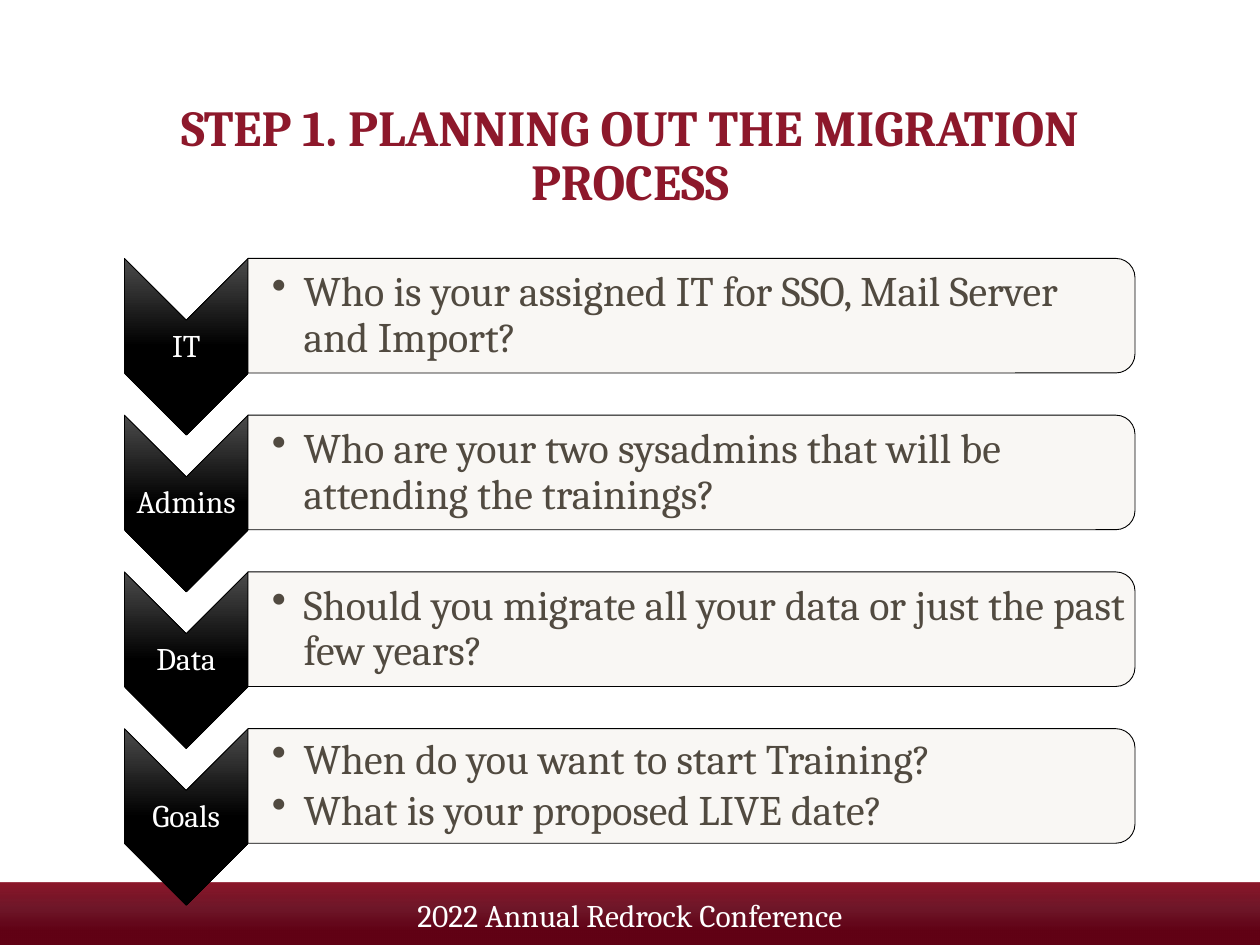
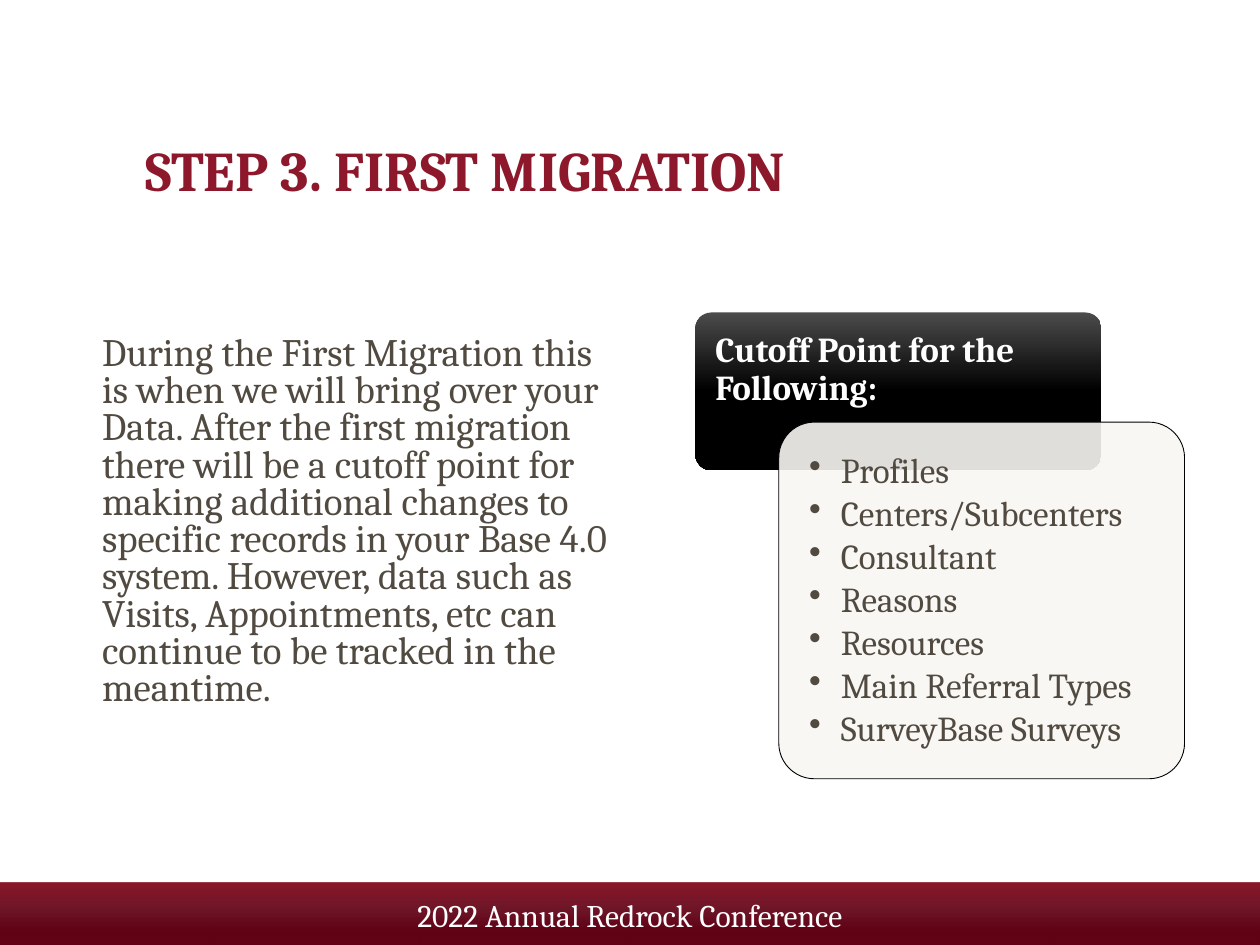
from lxml import etree
from pptx import Presentation
from pptx import util as u
from pptx.dml.color import RGBColor
from pptx.enum import shapes, text
from pptx.oxml import ns, parse_xml
from pptx.util import Cm

# Shared look
FONT = "Cambria"
CRIMSON = RGBColor(0x8D, 0x18, 0x2B)
MAROON = RGBColor(0x61, 0x02, 0x15)
CHARCOAL = RGBColor(0x4B, 0x4B, 0x4B)
BLACK = RGBColor(0, 0, 0)
WHITE = RGBColor(0xFF, 0xFF, 0xFF)
CREAM = RGBColor(0xF9, 0xF7, 0xF3)
TAUPE = RGBColor(0x51, 0x4A, 0x40)

BAND_STOPS = [(0, MAROON, 100), (24, MAROON, 100), (60, MAROON, 91), (100, CRIMSON, 100)]
DARK_STOPS = [(0, CHARCOAL, 100), (50, BLACK, 100), (100, BLACK, 100)]
DEFAULT_INSETS = (0.25, 0.13, 0.25, 0.13)
BULLET_INDENT = 0.64

STEPS = [
    ("IT", ["Who is your assigned IT for SSO, Mail Server and Import?"]),
    ("Admins", ["Who are your two sysadmins that will be attending the trainings?"]),
    ("Data", ["Should you migrate all your data or just the past few years?"]),
    ("Goals", ["When do you want to start Training?", "What is your proposed LIVE date?"]),
]
CUTOFF_ITEMS = ["Profiles", "Centers/Subcenters", "Consultant", "Reasons",
                "Resources", "Main Referral Types", "SurveyBase Surveys"]
MIGRATION_NOTE = (
    "During the First Migration this is when we will bring over your Data. "
    "After the first migration there will be a cutoff point for making additional "
    "changes to specific records in your Base 4.0 system. However, data such as "
    "Visits, Appointments, etc can continue to be tracked in the meantime.")


def write(frame, lines, size=18, color=TAUPE, bold=False, align=text.PP_ALIGN.LEFT,
          anchor=text.MSO_ANCHOR.TOP, insets=DEFAULT_INSETS, spacing=1.0, after=0,
          bullet=False, left_indent=0):
    """Fill a text frame with one paragraph per line; after is a share of the size."""
    frame.word_wrap = True
    frame.vertical_anchor = anchor
    (frame.margin_left, frame.margin_top,
     frame.margin_right, frame.margin_bottom) = [Cm(inset) for inset in insets]
    for number, line in enumerate(lines):
        paragraph = frame.paragraphs[0] if number == 0 else frame.add_paragraph()
        properties = paragraph._p.get_or_add_pPr()
        if bullet:
            properties.set("marL", str(Cm(BULLET_INDENT)))
            properties.set("indent", str(-Cm(BULLET_INDENT)))
            etree.SubElement(properties, ns.qn("a:buChar"), char="•")
        elif left_indent:
            properties.set("marL", str(Cm(left_indent)))
        paragraph.alignment = align
        paragraph.line_spacing = spacing
        paragraph.space_after = u.Pt(size * after)
        run = paragraph.add_run()
        run.text = line
        run.font.name = FONT
        run.font.size = u.Pt(size)
        run.font.bold = bold
        run.font.color.rgb = color


def add_text(slide, box, lines, **style):
    area = slide.shapes.add_textbox(*[Cm(length) for length in box])
    write(area.text_frame, lines, **style)


def add_alpha(color_element, percent):
    etree.SubElement(color_element, ns.qn("a:alpha"), val=str(percent * 1000))


def fill_gradient(shape, stops, angle):
    """Linear gradient that keeps its direction when the shape is turned."""
    gradient = parse_xml(
        f'<a:gradFill {ns.nsdecls("a")} rotWithShape="0"><a:gsLst/>'
        f'<a:lin ang="{angle * 60000}" scaled="0"/></a:gradFill>')
    for position, color, opacity in stops:
        stop = etree.SubElement(gradient[0], ns.qn("a:gs"), pos=str(position * 1000))
        color_element = etree.SubElement(stop, ns.qn("a:srgbClr"), val=str(color))
        if opacity < 100:
            add_alpha(color_element, opacity)
    geometry = shape._element.spPr.find(ns.qn("a:prstGeom"))
    geometry.addnext(gradient)


def add_block(slide, kind, box, outlined=True, turned=False):
    """Add a preset shape; a turned one fills the box after a quarter turn."""
    left, top, width, height = box
    if turned:
        left, top = left + (width - height) / 2, top + (height - width) / 2
        width, height = height, width
    block = slide.shapes.add_shape(kind, Cm(left), Cm(top), Cm(width), Cm(height))
    block.shadow.inherit = False
    if turned:
        block.rotation = 90
    if outlined:
        block.line.color.rgb = BLACK
        block.line.width = u.Pt(0.5)
    else:
        block.line.fill.background()
    return block


def add_dark_block(slide, kind, box, **options):
    block = add_block(slide, kind, box, **options)
    fill_gradient(block, DARK_STOPS, 90)
    return block


def add_cream_card(slide, kind, box, **options):
    card = add_block(slide, kind, box, **options)
    card.fill.solid()
    card.fill.fore_color.rgb = CREAM
    add_alpha(card._element.spPr.find(".//" + ns.qn("a:srgbClr")), 90)
    return card


def start_slide(deck, title, title_box, **title_style):
    """Blank slide with the footer band and the title."""
    slide = deck.slides.add_slide(deck.slide_layouts[6])
    band = add_block(slide, shapes.MSO_SHAPE.RECTANGLE, (0, 17.8, 25.4, 1.27), outlined=False)
    fill_gradient(band, BAND_STOPS, 270)
    write(band.text_frame, ["2022 Annual Redrock Conference"], color=WHITE,
          align=text.PP_ALIGN.CENTER, anchor=text.MSO_ANCHOR.MIDDLE)
    add_text(slide, title_box, [title], color=CRIMSON, bold=True, spacing=0.9,
             anchor=text.MSO_ANCHOR.BOTTOM, **title_style)
    return slide


def add_step(slide, top, label, questions):
    """One row: a downward chevron with its label, and a card of questions."""
    add_dark_block(slide, shapes.MSO_SHAPE.CHEVRON, (2.51, top, 2.49, 3.56), turned=True)
    add_text(slide, (2.51, top + 1.25, 2.49, 1.07), [label], color=WHITE,
             align=text.PP_ALIGN.CENTER, anchor=text.MSO_ANCHOR.MIDDLE,
             insets=(0.03,) * 4, spacing=0.9)
    add_cream_card(slide, shapes.MSO_SHAPE.ROUND_2_SAME_RECTANGLE,
                   (5, top, 17.88, 2.31), turned=True)
    add_text(slide, (5, top + 0.12, 17.8, 2.08), questions, size=24, bullet=True,
             anchor=text.MSO_ANCHOR.MIDDLE, insets=(0.48, 0.05, 0.05, 0.05),
             spacing=0.9, after=0.15)


def build_planning(deck):
    slide = start_slide(deck, "STEP 1. PLANNING OUT THE MIGRATION PROCESS",
                        (2.69, 2.24, 20.02, 2.16), size=28.8, align=text.PP_ALIGN.CENTER)
    for row, (label, questions) in enumerate(STEPS):
        add_step(slide, 5.21 + row * 3.16, label, questions)


def build_first_migration(deck):
    slide = start_slide(deck, "STEP 3. FIRST MIGRATION", (2.69, 1.52, 20.02, 2.72), size=32)
    add_text(slide, (1.68, 6.65, 11.02, 8.79), [MIGRATION_NOTE], size=22.2,
             spacing=0.8, left_indent=0.13)

    # Cutoff heading with the list card over its lower corner
    rounded = shapes.MSO_SHAPE.ROUNDED_RECTANGLE
    heading = add_dark_block(slide, rounded, (14.02, 6.3, 8.18, 3.18), outlined=False)
    add_text(slide, (14.02, 6.3, 8.18, 2.13), ["Cutoff Point for the Following:"],
             size=20, color=WHITE, bold=True, insets=(0.4, 0.4, 0.4, 0.2), spacing=0.9)
    card = add_cream_card(slide, rounded, (15.7, 8.51, 8.18, 7.19))
    for block in (heading, card):
        block.adjustments[0] = 0.1
    add_text(slide, (15.91, 8.74, 7.75, 6.78), CUTOFF_ITEMS, size=20, bullet=True,
             insets=(0.4,) * 4, spacing=0.9, after=0.15)


def main():
    deck = Presentation()
    deck.slide_width, deck.slide_height = Cm(25.4), Cm(19.05)
    build_planning(deck)
    build_first_migration(deck)
    deck.save("out.pptx")


if __name__ == "__main__":
    main()
